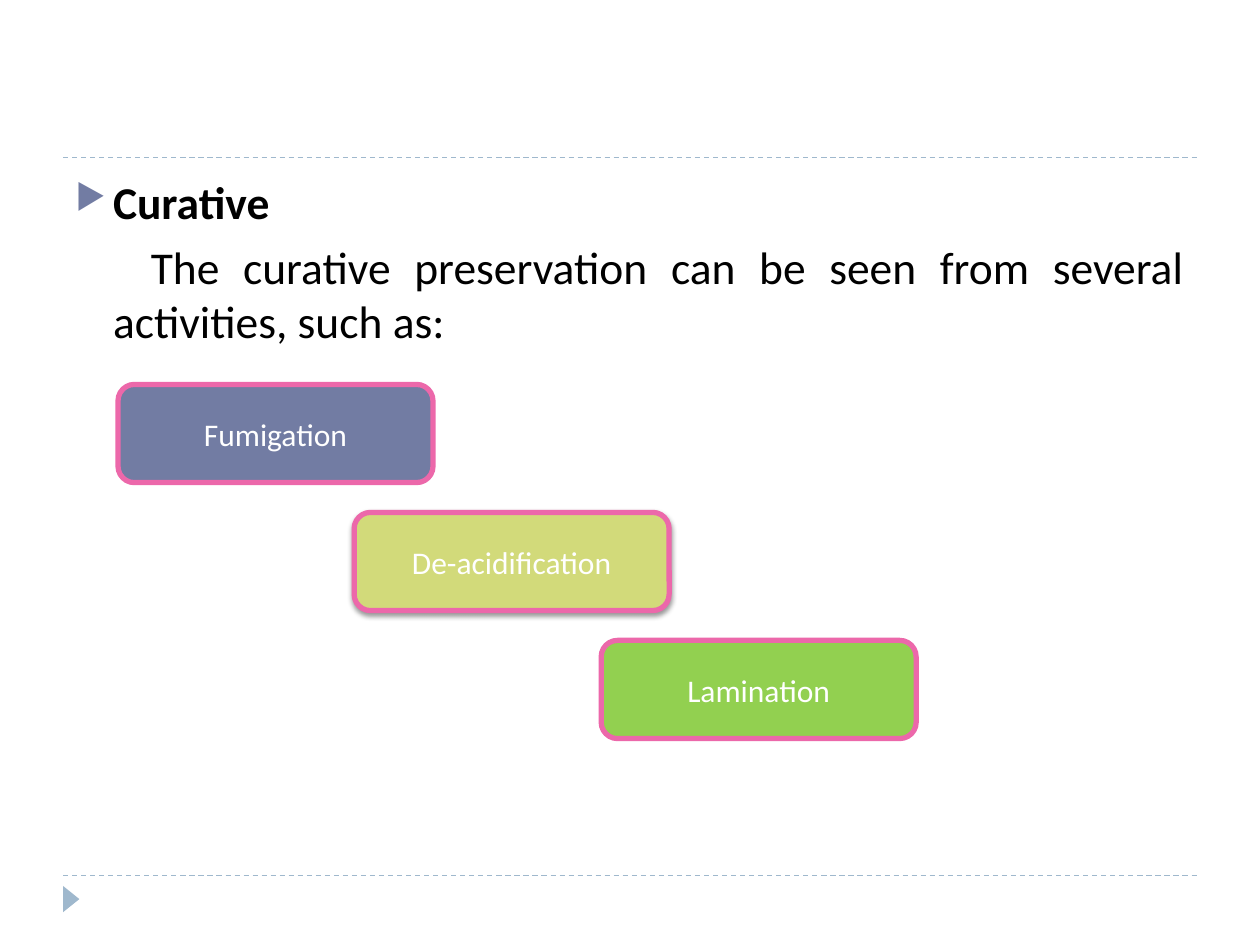
from lxml.etree import SubElement
from pptx import Presentation
from pptx.dml.color import RGBColor
from pptx.enum.dml import MSO_LINE
from pptx.enum.shapes import MSO_CONNECTOR, MSO_SHAPE
from pptx.enum.text import MSO_ANCHOR, PP_ALIGN
from pptx.oxml.ns import qn
from pptx.util import Cm, Pt

FONT = "Calibri"
RULE_COLOR, BORDER_COLOR, BULLET_COLOR = "9FB8CD", "EC68AA", "727CA3"
RULE_TOPS = (3.18, 17.65)
HEADING = "Curative"
INTRO = "The curative preservation can be seen from several activities, such as:"
ACTIVITIES = [
    ("Fumigation", 2.38, "727CA3", False),
    ("De-acidification", 7.14, "D2DA7A", True),
    ("Lamination", 12.12, "92D050", False),
]
FIRST_TOP, STEP_DOWN = 7.75, 2.58
BOX_WIDTH, BOX_HEIGHT = 6.35, 1.98
INDENT = Cm(0.76)


def rgb(color):
    """Turn a hex string into a colour."""
    return RGBColor.from_string(color)


def style(paragraph, size, color, align, bold=False):
    """Set the font and alignment of a whole paragraph."""
    paragraph.alignment = align
    font = paragraph.font
    font.name, font.size, font.bold = FONT, Pt(size), bold
    font.color.rgb = rgb(color)


def add_rule(slide, top):
    """Draw a dashed rule across the slide."""
    rule = slide.shapes.add_connector(
        MSO_CONNECTOR.STRAIGHT, Cm(1.27), Cm(top), Cm(24.13), Cm(top))
    rule.line.color.rgb = rgb(RULE_COLOR)
    rule.line.width = Pt(0.75)
    rule.line.dash_style = MSO_LINE.DASH
    SubElement(rule._element.spPr, qn("a:effectLst"))


def add_marker(slide):
    """Draw the small footer triangle that points right."""
    marker = slide.shapes.add_shape(
        MSO_SHAPE.ISOSCELES_TRIANGLE, Cm(1.17), Cm(17.96), Cm(0.53), Cm(0.33))
    marker.rotation = 90
    marker.shadow.inherit = False
    marker.fill.solid()
    marker.fill.fore_color.rgb = rgb(RULE_COLOR)
    marker.line.fill.background()


def indent(paragraph, first_line):
    """Set the left margin, first-line indent and space before."""
    paragraph.space_before = Pt(6)
    props = paragraph._p.get_or_add_pPr()
    props.set("marL", str(INDENT))
    props.set("indent", str(first_line))
    return props


def add_body(slide):
    """Write the bulleted heading and the justified introduction."""
    body = slide.shapes.add_textbox(Cm(1.27), Cm(3.38), Cm(22.86), Cm(13.72))
    frame = body.text_frame
    frame.word_wrap = True
    heading, intro = frame.paragraphs[0], frame.add_paragraph()
    heading.text, intro.text = HEADING, INTRO

    props = indent(heading, -INDENT)
    bullet_color = SubElement(props, qn("a:buClr"))
    SubElement(bullet_color, qn("a:srgbClr"), val=BULLET_COLOR)
    SubElement(props, qn("a:buSzPct"), val="76000")
    SubElement(props, qn("a:buChar"), char="▶")
    indent(intro, INDENT)

    style(heading, 26, "000000", PP_ALIGN.LEFT, bold=True)
    style(intro, 26, "000000", PP_ALIGN.JUSTIFY)


def add_shadow(shape):
    """Give a shape a soft shadow below it."""
    effects = shape._element.spPr.find(qn("a:effectLst"))
    shadow = SubElement(
        effects, qn("a:outerShdw"), blurRad=str(Pt(3)), dist=str(Pt(2)),
        dir="5400000", rotWithShape="0")
    shade = SubElement(shadow, qn("a:srgbClr"), val="000000")
    SubElement(shade, qn("a:alpha"), val="40000")


def add_activity(slide, step, name, left, color, shaded):
    """Draw one activity box of the staircase."""
    activity = slide.shapes.add_shape(
        MSO_SHAPE.ROUNDED_RECTANGLE, Cm(left), Cm(FIRST_TOP + step * STEP_DOWN),
        Cm(BOX_WIDTH), Cm(BOX_HEIGHT))
    activity.fill.solid()
    activity.fill.fore_color.rgb = rgb(color)
    activity.line.color.rgb = rgb(BORDER_COLOR)
    activity.line.width = Pt(3)
    activity.shadow.inherit = False
    if shaded:
        add_shadow(activity)
    activity.text_frame.vertical_anchor = MSO_ANCHOR.MIDDLE
    label = activity.text_frame.paragraphs[0]
    label.text = name
    style(label, 18, "FFFFFF", PP_ALIGN.CENTER)


def main():
    """Build the slide and save it."""
    deck = Presentation()
    deck.slide_width, deck.slide_height = Cm(25.4), Cm(19.05)
    slide = deck.slides.add_slide(deck.slide_layouts[6])
    for top in RULE_TOPS:
        add_rule(slide, top)
    add_marker(slide)
    add_body(slide)
    for step, activity in enumerate(ACTIVITIES):
        add_activity(slide, step, *activity)
    deck.save("out.pptx")


if __name__ == "__main__":
    main()
